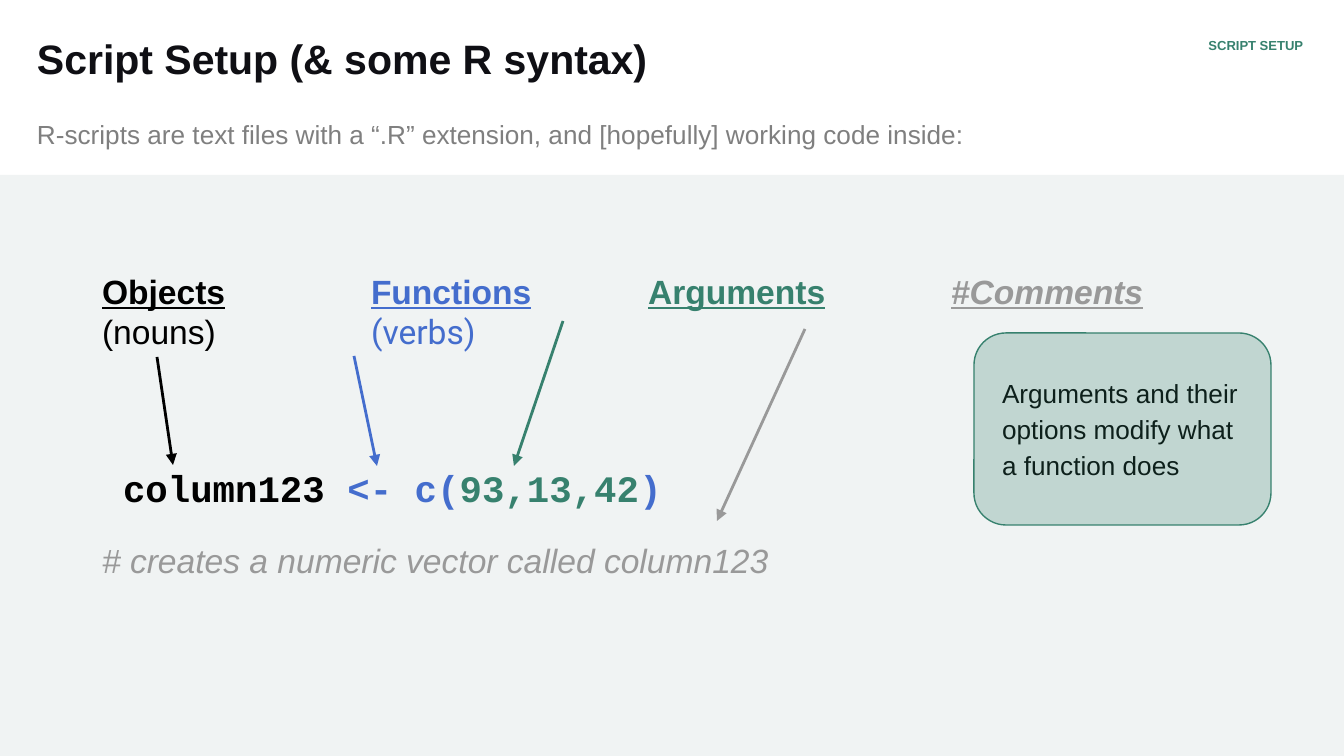
"""Build a slide that labels the parts of a line of R code."""
import dataclasses
import typing

import pptx
import pptx.dml.color
import pptx.enum.shapes
import pptx.enum.text
import pptx.oxml
import pptx.oxml.ns
import pptx.util

SCALE = 914400 / 134.4
PAD = 13
COLORS = {
    "white": "FFFFFF", "panel": "F0F3F3", "ink": "0F0F14", "black": "000000",
    "soft": "7F7F7F", "gray": "999999", "blue": "446DCD", "green": "37816E",
}
STOPS = (269, 546, 849)
HEAD = {"bold": True, "underline": True}
CODE = {"name": "Courier New", "size": 20, "bold": True}
NOTE = {"size": 14}


@dataclasses.dataclass
class Run:
    text: str
    color: str = "black"
    font: dict = dataclasses.field(default_factory=dict)


@dataclasses.dataclass
class Para:
    runs: list[Run]
    form: dict = dataclasses.field(default_factory=dict)
    stops: tuple = ()
    left: int = 0


@dataclasses.dataclass
class Box:
    area: tuple
    paras: list[Para]
    pads: tuple = (0, 0, PAD, PAD)


@dataclasses.dataclass
class Arrow:
    start: tuple
    end: tuple
    color: str


BREAK = Run("\n")
TAB = Run("\t")
TIGHT = {"line_spacing": 0.9}

HEADER = [
    Box((890, 39, 413, 48), [Para(
        [Run("SCRIPT SETUP", "green", {"size": 7, "bold": True})],
        {**TIGHT, "alignment": pptx.enum.text.PP_ALIGN.RIGHT})], (0, 0, 0, PAD)),
    Box((37, 39, 1074, 79), [Para(
        [Run("Script Setup (& some R syntax)", "ink", {"size": 22, "bold": True})], TIGHT)]),
    Box((37, 118, 953, 63), [Para([Run(
        "R-scripts are text files with a “.R” extension, and [hopefully] working code inside:",
        "soft", NOTE)])]),
]
SYNTAX = Box((89, 258, 1167, 336), [
    Para([
        Run("Objects", "black", HEAD), TAB,
        Run("Functions", "blue", HEAD), TAB,
        Run("Arguments", "green", HEAD), TAB,
        Run("#Comments", "gray", {**HEAD, "italic": True}), BREAK,
        Run("(nouns)"), TAB, Run("(verbs)", "blue", {"name": "Roboto"}),
    ], stops=STOPS),
    Para([
        Run("column123 ", "black", CODE), Run("<- c(", "blue", CODE),
        Run("93,13,42", "green", CODE), Run(")", "blue", CODE),
    ], {"space_before": pptx.util.Pt(61)}, left=21),
    Para([Run("# creates a numeric vector called column123", "gray", {"italic": True})],
         {"space_before": pptx.util.Pt(16)}),
], (PAD,) * 4)
ARROWS = [
    Arrow((157, 357), (173, 465), "black"),
    Arrow((354, 356), (377, 466), "blue"),
    Arrow((563, 321), (514, 466), "green"),
    Arrow((805, 329), (717, 521), "gray"),
]
ADVICE = Box((989, 360, 266, 132), [Para(
    [Run("Arguments and their options modify what a function does", "black", NOTE)],
    {"line_spacing": 1.15})], (PAD,) * 4)


def emu(px: float) -> int:
    """Turn px into EMU."""
    return round(px * SCALE)


def paint(color: str) -> pptx.dml.color.RGBColor:
    """Look up a named colour."""
    return pptx.dml.color.RGBColor.from_string(COLORS[color])


def assign(target: typing.Any, form: dict) -> None:
    """Set each format value on the target."""
    for name, value in form.items():
        setattr(target, name, value)


def node(parent: typing.Any, tag: str, **attrs: str) -> typing.Any:
    """Append a drawing element with its attributes."""
    child = pptx.oxml.parse_xml(f"<{tag} {pptx.oxml.ns.nsdecls('a')}/>")
    for name, value in attrs.items():
        child.set(name, value)
    parent.append(child)
    return child


def write(para: typing.Any, data: Para) -> None:
    """Fill a paragraph with its runs."""
    props = para._p.get_or_add_pPr()
    if data.left:
        props.set("marL", str(emu(data.left)))
    if data.stops:
        tabs = node(props, "a:tabLst")
        for stop in data.stops:
            node(tabs, "a:tab", pos=str(emu(stop)), algn="l")
    assign(para, data.form)
    for item in data.runs:
        if item is BREAK:
            para.add_line_break()
            continue
        run = para.add_run()
        run.text = item.text
        form = {"name": "Arial", "size": 18, **item.font}
        form["size"] = pptx.util.Pt(form["size"])
        assign(run.font, form)
        run.font.color.rgb = paint(item.color)


def place(slide: typing.Any, box: Box) -> None:
    """Draw a text box."""
    frame = slide.shapes.add_textbox(*map(emu, box.area)).text_frame
    sides = ("margin_left", "margin_top", "margin_right", "margin_bottom")
    assign(frame, {"word_wrap": True, **dict(zip(sides, map(emu, box.pads)))})
    for index, data in enumerate(box.paras):
        write(frame.add_paragraph() if index else frame.paragraphs[0], data)


def block(slide: typing.Any, kind: typing.Any, area: tuple, color: str) -> typing.Any:
    """Draw a filled shape without a line."""
    shape = slide.shapes.add_shape(kind, *map(emu, area))
    shape.shadow.inherit = False
    shape.fill.solid()
    shape.fill.fore_color.rgb = paint(color)
    shape.line.fill.background()
    return shape


def point(slide: typing.Any, arrow: Arrow) -> None:
    """Draw an arrow."""
    kind = pptx.enum.shapes.MSO_CONNECTOR.STRAIGHT
    link = slide.shapes.add_connector(kind, *map(emu, arrow.start + arrow.end))
    link.line.color.rgb = paint(arrow.color)
    link.line.width = pptx.util.Pt(1.5)
    node(link.line._get_or_add_ln(), "a:tailEnd", type="triangle")
    node(link._element.spPr, "a:effectLst")


def main() -> None:
    """Build and save the slide."""
    deck = pptx.Presentation()
    assign(deck, {"slide_width": emu(1344), "slide_height": emu(756)})
    slide = deck.slides.add_slide(deck.slide_layouts[6])
    slide.background.fill.solid()
    slide.background.fill.fore_color.rgb = paint("white")
    kinds = pptx.enum.shapes.MSO_SHAPE
    block(slide, kinds.RECTANGLE, (0, 175, 1344, 581), "panel")
    for box in HEADER + [SYNTAX]:
        place(slide, box)
    for arrow in ARROWS:
        point(slide, arrow)
    place(slide, ADVICE)
    veil = block(slide, kinds.ROUNDED_RECTANGLE, (974, 333, 297, 192), "green")
    veil.line.color.rgb = paint("green")
    veil.line.width = pptx.util.Pt(0.75)
    fill = veil._element.spPr.find(pptx.oxml.ns.qn("a:solidFill"))
    node(fill[0], "a:alpha", val="25000")
    deck.save("out.pptx")


if __name__ == "__main__":
    main()
